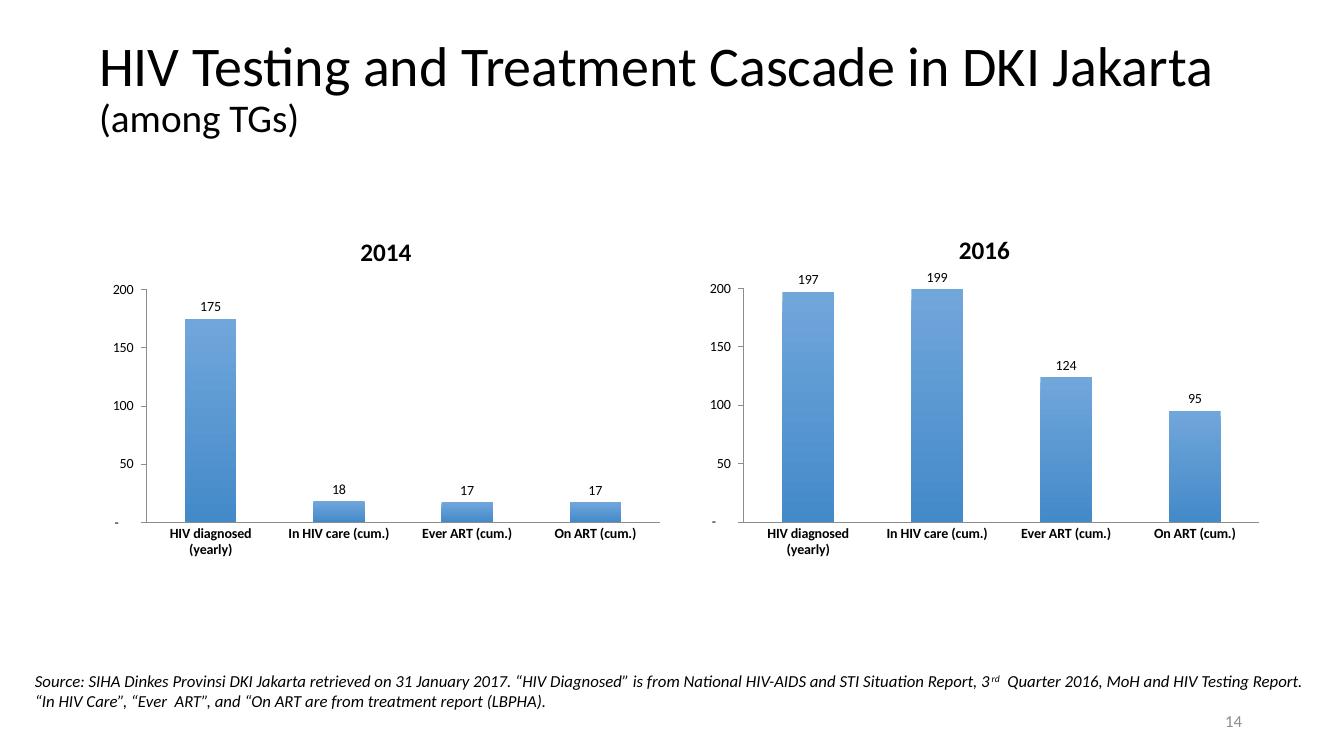
from dataclasses import dataclass

from pptx import Presentation
from pptx.chart.data import CategoryChartData
from pptx.dml.color import RGBColor
from pptx.enum.chart import XL_CHART_TYPE, XL_LABEL_POSITION, XL_TICK_MARK
from pptx.enum.text import MSO_ANCHOR, MSO_AUTO_SIZE, PP_ALIGN
from pptx.oxml import parse_xml
from pptx.util import Pt


@dataclass(frozen=True)
class Theme:
    font: str = "Calibri"
    ink: str = "000000"
    gray: str = "8C8C8C"
    light: str = "71A6DB"
    dark: str = "438AC9"
    title: int = 40
    sub: int = 28
    head: int = 18
    note: int = 12
    label: int = 10


THEME = Theme()
SCALE = 914400 / 100.8
FORMAT = r'_(* #,##0_);_(* \(#,##0\);_(* "-"??_);_(@_)'
STAGES = ["HIV diagnosed (yearly)", "In HIV care (cum.)",
          "Ever ART (cum.)", "On ART (cum.)"]
CHARTS = [("2014", (175, 18, 17, 17), (101, 217, 570, 347)),
          ("2016", (197, 199, 124, 95), (698, 215, 573, 349))]
PLOT = {"x": 0.08, "y": 0.21, "w": 0.9, "h": 0.67}
SOURCE = [
    ("Source: SIHA Dinkes Provinsi DKI Jakarta retrieved on 31 January 2017. "
     "“HIV Diagnosed” is from National HIV-AIDS and STI Situation Report, 3", 0),
    ("rd", 30000),
    ("  Quarter 2016, MoH and HIV Testing Report. “In HIV Care”, “Ever  ART”, "
     "and “On ART are from treatment report (LBPHA).", 0),
]


def px(n):
    return round(n * SCALE)


def assign(target, values):
    for name, value in values.items():
        setattr(target, name, value)


def style(font, size, color=THEME.ink, **extra):
    assign(font, {"name": THEME.font, "size": Pt(size), **extra})
    font.color.rgb = RGBColor.from_string(color)


def place(shape, box):
    assign(shape, dict(zip(("left", "top", "width", "height"), map(px, box))))


def add_run(para, text, size, color=THEME.ink, **extra):
    run = para.add_run()
    run.text = text
    style(run.font, size, color, **extra)
    return run


def add_title(slide, main_text, sub_text):
    title = slide.shapes.title
    place(title, (89, 0, 1180, 180))
    assign(title.text_frame, {"vertical_anchor": MSO_ANCHOR.MIDDLE,
                              "auto_size": MSO_AUTO_SIZE.NONE, "word_wrap": True})
    para = title.text_frame.paragraphs[0]
    assign(para, {"alignment": PP_ALIGN.LEFT, "line_spacing": 0.9})
    add_run(para, main_text, THEME.title)
    para.add_line_break()
    add_run(para, sub_text, THEME.sub)


def add_text(slide, box, anchor, align):
    frame = slide.shapes.add_textbox(*map(px, box)).text_frame
    assign(frame, {"word_wrap": True, "vertical_anchor": anchor})
    para = frame.paragraphs[0]
    para.alignment = align
    return para


def set_plot(chart):
    """Fix the inner plot area as fractions of the chart."""
    area = chart.plots[0]._element.getparent()
    for old in area.findall("{*}layout"):
        area.remove(old)
    sizes = "".join(f'<c:{key} val="{val}"/>' for key, val in PLOT.items())
    area.insert(0, parse_xml(
        '<c:layout xmlns:c="http://schemas.openxmlformats.org/drawingml/2006/chart">'
        '<c:manualLayout><c:layoutTarget val="inner"/>'
        '<c:xMode val="edge"/><c:yMode val="edge"/>'
        f'{sizes}</c:manualLayout></c:layout>'))


def set_axes(chart):
    values, stages = chart.value_axis, chart.category_axis
    assign(values, {"minimum_scale": 0, "maximum_scale": 200, "major_unit": 50,
                    "has_major_gridlines": False,
                    "major_tick_mark": XL_TICK_MARK.OUTSIDE})
    assign(values.tick_labels, {"number_format": FORMAT,
                                "number_format_is_linked": False})
    stages.major_tick_mark = XL_TICK_MARK.NONE
    for axis, bold in ((values, False), (stages, True)):
        style(axis.tick_labels.font, THEME.label, bold=bold)
        axis.format.line.width = Pt(0.75)
        axis.format.line.color.rgb = RGBColor.from_string(THEME.gray)


def set_bars(plot):
    assign(plot, {"gap_width": 150, "overlap": -25,
                  "vary_by_categories": False, "has_data_labels": True})
    assign(plot.data_labels, {"show_value": True, "number_format": FORMAT,
                              "number_format_is_linked": False,
                              "position": XL_LABEL_POSITION.OUTSIDE_END})
    style(plot.data_labels.font, THEME.label)
    fill = plot.series[0].format.fill
    fill.gradient()
    fill.gradient_angle = 270
    for stop, color in zip(fill.gradient_stops, (THEME.light, THEME.dark)):
        stop.color.rgb = RGBColor.from_string(color)


def add_bars(slide, year, counts, box):
    data = CategoryChartData()
    data.categories = STAGES
    data.add_series(year, counts)
    chart = slide.shapes.add_chart(
        XL_CHART_TYPE.COLUMN_CLUSTERED, *map(px, box), data).chart
    style(chart.font, THEME.label)
    assign(chart, {"has_legend": False, "has_title": True})
    head = chart.chart_title
    head.include_in_layout = False
    add_run(head.text_frame.paragraphs[0], year, THEME.head, bold=True)
    set_plot(chart)
    set_axes(chart)
    set_bars(chart.plots[0])


def main():
    deck = Presentation()
    assign(deck, {"slide_width": px(1344), "slide_height": px(756)})
    slide = deck.slides.add_slide(deck.slide_layouts[5])
    add_title(slide, "HIV Testing and Treatment Cascade in DKI Jakarta ",
              "(among TGs)")
    number = add_text(slide, (950, 701, 302, 40), MSO_ANCHOR.MIDDLE, PP_ALIGN.RIGHT)
    add_run(number, "14", THEME.note, THEME.gray)
    source = add_text(slide, (25, 666, 1298, 50), MSO_ANCHOR.TOP, PP_ALIGN.LEFT)
    for text, base in SOURCE:
        run = add_run(source, text, THEME.note, italic=True)
        if base:
            run.font._element.set("baseline", str(base))
    for year, counts, box in CHARTS:
        add_bars(slide, year, counts, box)
    deck.save("out.pptx")


if __name__ == "__main__":
    main()
